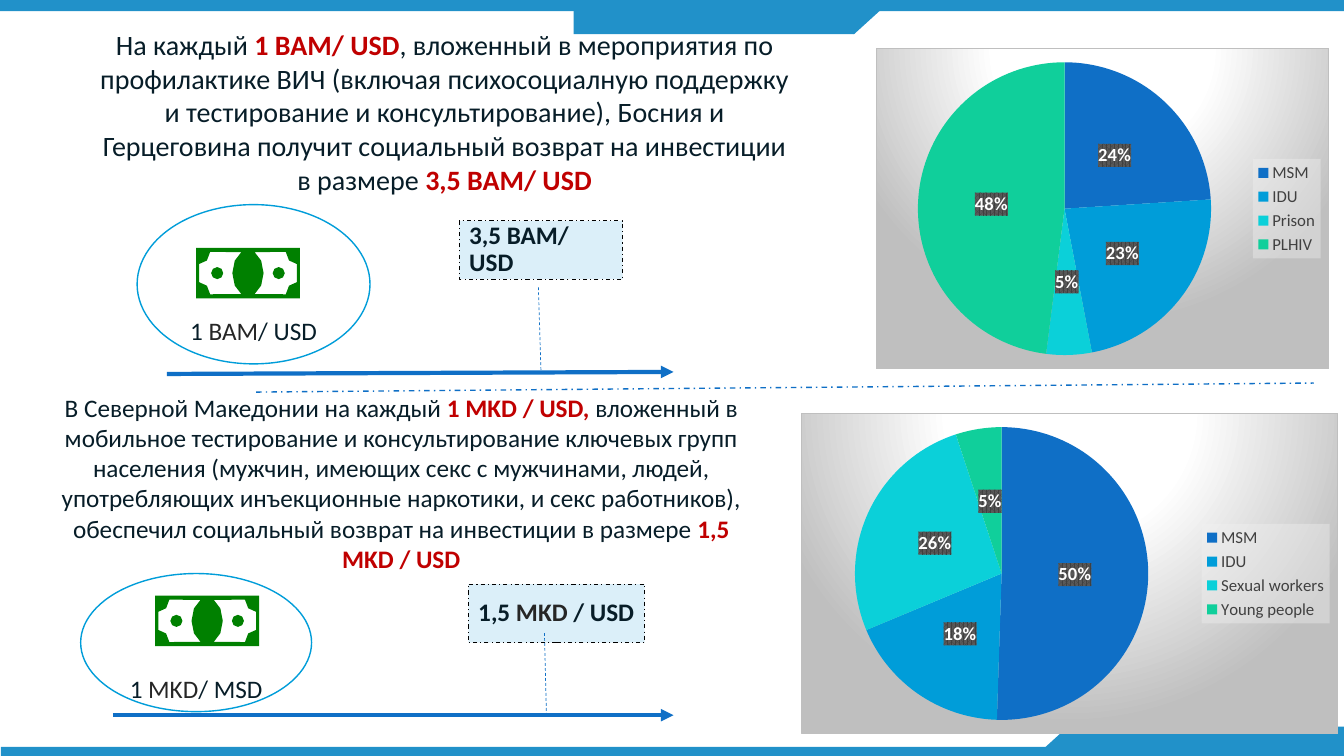
"""Build the slide on the social return on investment in HIV prevention."""
import math
from dataclasses import dataclass
from typing import Any, NamedTuple, Optional

import pptx
import pptx.chart.data
import pptx.dml.color
import pptx.enum.chart
import pptx.enum.dml
import pptx.enum.shapes
import pptx.enum.text
import pptx.oxml
import pptx.oxml.ns
import pptx.util

SHAPE = pptx.enum.shapes.MSO_SHAPE
DASH = pptx.enum.dml.MSO_LINE
ALIGN = pptx.enum.text.PP_ALIGN
ANCHOR = pptx.enum.text.MSO_ANCHOR
qn = pptx.oxml.ns.qn
COLS, ROWS = 133.3, 75
CELL = pptx.util.Inches(0.1)


@dataclass(frozen=True)
class Theme:
    font: str = "Calibri"
    band: str = "2191C9"
    ink: str = "071D28"
    grey: str = "262626"
    accent: str = "C00000"
    white: str = "FFFFFF"
    black: str = "000000"
    legend: str = "404040"
    legend_back: str = "F2F2F2"
    label_back: str = "595959"
    edge: str = "BFBFBF"
    bill: str = "008000"
    oval: str = "009DD9"
    arrow: str = "0F6FC6"
    box: str = "DBEFF9"
    slices: tuple = ("0F6FC6", "009DD9", "0BD0D9", "10CF9B")
    lead: float = 20
    body: float = 18
    label: float = 13.3
    key: float = 12
    small: float = 10


T = Theme()


class Run(NamedTuple):
    text: str
    color: str = T.ink
    bold: bool = False


class Box(NamedTuple):
    left: float
    top: float
    width: float
    height: float


class Block(NamedTuple):
    at: Box
    kind: Any
    fill: str
    line: Optional[str] = None
    weight: float = 1
    dash: Any = None
    turn: float = 0
    runs: tuple = ()
    para: dict = {}
    frame: dict = {}


class Line(NamedTuple):
    start: tuple
    end: tuple
    weight: float
    dash: Any = None
    arrow: bool = False


class Pie(NamedTuple):
    at: Box
    shares: dict


def cells(*values: float) -> list:
    return [pptx.util.Emu(round(v * CELL)) for v in values]


def rgb(value: str) -> Any:
    return pptx.dml.color.RGBColor.from_string(value)


def apply(target: Any, values: dict) -> None:
    for name, value in values.items():
        setattr(target, name, value)


def style_font(font: Any, size: float, color: str, bold: bool = False) -> None:
    apply(font, {"name": T.font, "size": pptx.util.Pt(size), "bold": bold})
    font.color.rgb = rgb(color)


def write(tf: Any, runs: tuple, size: float, para: dict, frame: dict) -> None:
    apply(tf, {"word_wrap": True, **frame})
    p = tf.paragraphs[0]
    apply(p, para)
    for run in runs:
        r = p.add_run()
        r.text = run.text
        style_font(r.font, size, run.color, run.bold)


def draw_block(s: Any, block: Block) -> None:
    sp = s.shapes.add_shape(block.kind, *cells(*block.at))
    sp.shadow.inherit = False
    sp.rotation = block.turn
    sp.fill.solid()
    sp.fill.fore_color.rgb = rgb(block.fill)
    if block.line:
        sp.line.color.rgb = rgb(block.line)
        apply(sp.line, {"width": pptx.util.Pt(block.weight), "dash_style": block.dash})
    else:
        sp.line.fill.background()
    if block.runs:
        write(sp.text_frame, block.runs, T.body, block.para, block.frame)


def draw_line(s: Any, line: Line) -> None:
    straight = pptx.enum.shapes.MSO_CONNECTOR.STRAIGHT
    cn = s.shapes.add_connector(straight, *cells(*line.start, *line.end))
    cn.line.color.rgb = rgb(T.arrow)
    apply(cn.line, {"width": pptx.util.Pt(line.weight), "dash_style": line.dash})
    props = cn._element.spPr
    if line.arrow:
        tip = props.makeelement(qn("a:tailEnd"), {"type": "triangle"})
        props.find(qn("a:ln")).append(tip)
    props.append(props.makeelement(qn("a:effectLst"), {}))


def arc(cx: float, cy: float, rx: float, ry: float, first: int, last: int, steps: int) -> list:
    angles = [math.radians(first + (last - first) * i / steps) for i in range(steps + 1)]
    return [(cx + rx * math.cos(a), cy + ry * math.sin(a)) for a in angles]


def draw_bill(s: Any, left: float, top: float) -> None:
    width, height = 10.3, 5
    panel = (arc(5.15, 2.5, 1.55, 2.3, 245, 115, 4) + arc(0.3, 4.6, 1.1, 1.2, 0, -90, 2)
             + arc(0.3, 0.4, 1.1, 1.2, 90, 0, 2))
    dot = arc(2.1, 2.5, 0.6, 0.6, 0, 315, 7)
    frame = [(0, 0), (0, height), (width, height), (width, 0)]
    mirrored = [[(width - x, y) for x, y in part] for part in (panel, dot)]
    contours = [[cells(left + x, top + y) for x, y in part]
                for part in (frame, panel, dot, *mirrored)]
    fb = s.shapes.build_freeform(*contours[0][0])
    for i, points in enumerate(contours):
        if i:
            fb.move_to(*points[0])
        fb.add_line_segments(points[1:], close=True)
    sp = fb.convert_to_shape()
    sp.shadow.inherit = False
    sp.fill.solid()
    sp.fill.fore_color.rgb = rgb(T.bill)
    sp.line.fill.background()


def chart_fill(body: str) -> Any:
    space = pptx.oxml.ns.nsdecls("c", "a")
    return pptx.oxml.parse_xml(f"<c:spPr {space}>{body}</c:spPr>")


def solid(color: str) -> str:
    return f'<a:srgbClr val="{color}"/>'


def draw_pie(s: Any, pie: Pie) -> None:
    data = pptx.chart.data.CategoryChartData()
    data.categories = pie.shares.keys()
    data.add_series("Series 1", pie.shares.values())
    kind = pptx.enum.chart.XL_CHART_TYPE.PIE
    chart = s.shapes.add_chart(kind, *cells(*pie.at), data).chart
    apply(chart, {"has_title": False, "has_legend": True})
    style_font(chart.font, T.small, T.black)
    apply(chart.legend, {"position": pptx.enum.chart.XL_LEGEND_POSITION.RIGHT,
                         "include_in_layout": False})
    style_font(chart.legend.font, T.key, T.legend)
    plot = chart.plots[0]
    apply(plot, {"vary_by_categories": True, "has_data_labels": True})
    for i, color in enumerate(T.slices):
        fill = plot.series[0].points[i].format.fill
        fill.solid()
        fill.fore_color.rgb = rgb(color)
    labels = plot.data_labels
    apply(labels, {"show_value": True, "show_percentage": False, "number_format": '0"%"',
                   "number_format_is_linked": False,
                   "position": pptx.enum.chart.XL_LABEL_POSITION.CENTER})
    style_font(labels.font, T.label, T.white, True)
    labels._element.find(qn("c:txPr")).addprevious(chart_fill(
        f'<a:pattFill prst="pct75"><a:fgClr>{solid(T.legend)}</a:fgClr>'
        f'<a:bgClr>{solid(T.label_back)}</a:bgClr></a:pattFill>'))
    chart.legend._element.find(qn("c:txPr")).addprevious(chart_fill(
        f'<a:solidFill><a:srgbClr val="{T.legend_back}"><a:alpha val="39000"/>'
        '</a:srgbClr></a:solidFill>'))
    stops = "".join(f'<a:gs pos="{at}">{solid(color)}</a:gs>' for at, color in
                    ((0, T.white), (39000, T.white), (100000, T.edge)))
    chart._chartSpace.find(qn("c:chart")).addnext(chart_fill(
        f'<a:gradFill><a:gsLst>{stops}</a:gsLst><a:path path="circle">'
        '<a:fillToRect l="50000" t="-80000" r="50000" b="180000"/></a:path></a:gradFill>'
        f'<a:ln w="9525"><a:solidFill>{solid(T.edge)}</a:solidFill></a:ln>'))


def oval(at: Box, *runs: Run) -> Block:
    frame = {"vertical_anchor": ANCHOR.MIDDLE, "margin_top": cells(9.1)[0], "margin_bottom": 0}
    return Block(at, SHAPE.FLOWCHART_CONNECTOR, T.white, T.oval, runs=runs,
                 para={"alignment": ALIGN.CENTER}, frame=frame)


def result(at: Box, *runs: Run) -> Block:
    return Block(at, SHAPE.RECTANGLE, T.box, T.black, 0.75, DASH.DASH_DOT, runs=runs,
                 para={"alignment": ALIGN.LEFT, "line_spacing": 0.9},
                 frame={"vertical_anchor": ANCHOR.MIDDLE})


BLOCKS = (
    Block(Box(0, 0, COLS, 1.1), SHAPE.RECTANGLE, T.band),
    Block(Box(0.1, ROWS - 0.9, COLS, 1.1), SHAPE.RECTANGLE, T.band),
    Block(Box(56.9, 0.4, 27.8, 3), SHAPE.RECTANGLE, T.band),
    Block(Box(81.4, 0.4, 6.6, 3), SHAPE.FLOWCHART_MERGE, T.band),
    Block(Box(105.9, 72.1, 27.8, 3), SHAPE.RECTANGLE, T.band),
    Block(Box(102.6, 72.1, 6.6, 3), SHAPE.FLOWCHART_MERGE, T.band, turn=180),
    oval(Box(8, 56.9, 22.9, 13.7), Run("1 "), Run("MKD", T.grey), Run("/ МSD")),
    oval(Box(13.6, 20.3, 23.1, 15.8), Run("1 "), Run("ВАМ", T.grey), Run("/ USD")),
    result(Box(45.55, 21.9, 16.2, 5.8), Run("3,5 ВАМ/ USD", bold=True)),
    result(Box(46.45, 57.95, 17.5, 5.8), Run("1,5 ", bold=True), Run("MKD ", T.grey, True),
           Run("/ USD", bold=True)),
)
LINES = (
    Line((25.4, 38.9), (130.3, 38), 1, DASH.DASH_DOT),
    Line((16.55, 37.1), (66.8, 36.9), 3, arrow=True),
    Line((53.4, 28.5), (53.65, 36.7), 0.5, DASH.DASH),
    Line((11.2, 70.95), (66.8, 70.95), 3, arrow=True),
    Line((54, 62.8), (54.2, 70.95), 0.5, DASH.DASH),
)
PIES = (
    Pie(Box(86.85, 4.75, 45, 31.9), {"MSM": 24, "IDU": 23, "Prison": 5, "PLHIV": 48}),
    Pie(Box(79.45, 40.95, 53.3, 31.9),
        {"MSM": 50, "IDU": 18, "Sexual workers": 26, "Young people": 5}),
)
BOSNIA = (
    Run("На каждый "), Run("1 ВАМ/ USD", T.accent, True),
    Run(", вложенный в мероприятия по профилактике ВИЧ (включая психосоциалную поддержку и "
        "тестирование и консультирование), Босния и Герцеговина получит социальный возврат "
        "на инвестиции в размере "),
    Run("3,5 ВАМ/ USD", T.accent, True),
)
MACEDONIA = (
    Run("В Северной Македонии на каждый "), Run("1 MKD / USD, ", T.accent, True),
    Run("вложенный в мобильное тестирование и консультирование ключевых групп населения "
        "(мужчин, имеющих секс с мужчинами, людей, употребляющих инъекционные наркотики, и "
        "секс работников), обеспечил социальный возврат на инвестиции в размере "),
    Run("1,5 MKD / USD", T.accent, True),
)


def main() -> None:
    prs = pptx.Presentation()
    prs.slide_width, prs.slide_height = cells(COLS, ROWS)
    s = prs.slides.add_slide(prs.slide_layouts[5])
    for block in BLOCKS:
        draw_block(s, block)
    for line in LINES:
        draw_line(s, line)
    for corner in ((19.45, 24.6), (15.4, 59.1)):
        draw_bill(s, *corner)
    title = s.shapes.title
    s.shapes._spTree.append(title._element)
    note = s.shapes.add_textbox(*cells(3.8, 38.4, 72, 19.2))
    apply(title, dict(zip(("left", "top", "width", "height"), cells(8.75, 2.25, 70.7, 17.8))))
    frame = {"vertical_anchor": ANCHOR.TOP, "auto_size": pptx.enum.text.MSO_AUTO_SIZE.NONE}
    for sp, runs, size in ((title, BOSNIA, T.lead), (note, MACEDONIA, T.body)):
        write(sp.text_frame, runs, size, {"alignment": ALIGN.CENTER}, frame)
    for pie in PIES:
        draw_pie(s, pie)
    prs.save("out.pptx")


if __name__ == "__main__":
    main()
